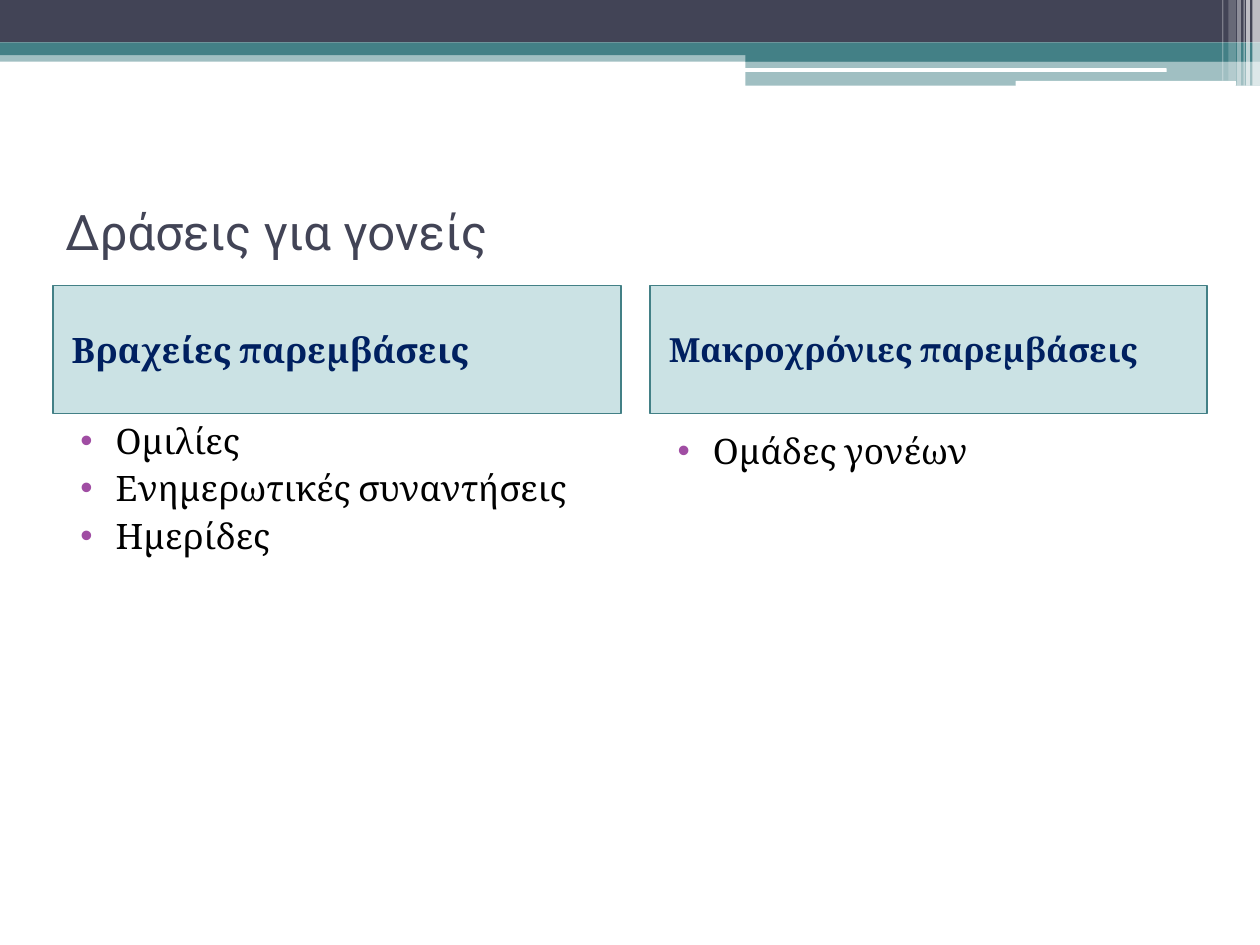
"""Build a slide that compares short and long interventions for parents."""
from lxml.etree import SubElement
from pptx import Presentation
from pptx.dml.color import RGBColor
from pptx.enum.shapes import MSO_SHAPE
from pptx.enum.text import MSO_ANCHOR, PP_ALIGN
from pptx.oxml.ns import qn
from pptx.util import Pt

NAVY, TEAL, WHITE = "424456", "438086", "FFFFFF"
PANEL, HEADING, BULLET, BLACK = "328E97", "002060", "A04DA3", "000000"
MARGIN = 30.24

BANDS = [
    (0, 28.8, 720, 6.48, TEAL, 50),
    (0, 0, 720, 24.3, NAVY, 100),
    (0, 24.3, 720, 7.2, TEAL, 100),
    (426, 28.08, 294, 7.2, TEAL, 100),
    (426, 34.9, 294, 14.1, TEAL, 50),
]
HIGHLIGHTS = [(425.5, 39, 241.2, 2.16), (580.3, 46.2, 126, 2.88)]
STRIPES = [
    (715.7, 4.3, 49, 65),
    (712.1, 2.16, 49, 65),
    (710.6, 0.72, 49, 60),
    (707, 2.16, 49, 40),
    (702, 4.3, 46.1, 20),
    (698.4, 0.72, 46.1, 30),
]

TITLE = "Δράσεις για γονείς"
COLUMNS = [
    {"heading": "Βραχείες παρεμβάσεις", "size": 20, "left": MARGIN,
     "width": 324.7, "list_top": 236.2,
     "items": ["Ομιλίες", "Ενημερωτικές συναντήσεις", "Ημερίδες"]},
    {"heading": "Μακροχρόνιες παρεμβάσεις", "size": 19, "left": 371.5,
     "width": 318.2, "list_top": 241.9, "items": ["Ομάδες γονέων"]},
]
PANEL_TOP, PANEL_HEIGHT = 163.2, 73.2
LIST_WIDTH, LIST_BOTTOM = 318.2, 519.1


def color(value):
    return RGBColor.from_string(value)


def add_box(slide, box, fill, opacity=100, kind=MSO_SHAPE.RECTANGLE, line=None):
    shape = slide.shapes.add_shape(kind, *map(Pt, box))
    shape.shadow.inherit = False
    shape.fill.solid()
    shape.fill.fore_color.rgb = color(fill)
    if opacity < 100:
        fill_color = shape.fill._xPr.find(qn("a:solidFill"))[0]
        SubElement(fill_color, qn("a:alpha"), val=str(opacity * 1000))
    if line:
        shape.line.color.rgb = color(line)
        shape.line.width = Pt(1)
    else:
        shape.line.fill.background()
    return shape


def write(shape, lines, size, font, text_color, anchor, bold=False,
          before=0, margin=0, indent=0, bullet=None):
    frame = shape.text_frame
    frame.word_wrap = True
    frame.vertical_anchor = anchor
    frame.text = "\n".join(lines)
    for paragraph in frame.paragraphs:
        paragraph.alignment = PP_ALIGN.LEFT
        paragraph.space_before = Pt(before)
        paragraph.font.size = Pt(size)
        paragraph.font.name = font
        paragraph.font.bold = bold
        paragraph.font.color.rgb = color(text_color)
        properties = paragraph._p.get_or_add_pPr()
        properties.set("marL", str(Pt(margin)))
        properties.set("indent", str(Pt(indent)))
        if bullet:
            bullet_color = properties.makeelement(qn("a:buClr"))
            SubElement(bullet_color, qn("a:srgbClr"), val=bullet)
            bullet_font = properties.makeelement(qn("a:buFont"), typeface="Arial")
            character = properties.makeelement(qn("a:buChar"), char="•")
            defaults = properties.find(qn("a:defRPr"))
            for element in (bullet_color, bullet_font, character):
                defaults.addprevious(element)


def add_header(slide):
    for *box, fill, opacity in BANDS:
        add_box(slide, box, fill, opacity)
    for box in HIGHLIGHTS:
        add_box(slide, box, WHITE, kind=MSO_SHAPE.ROUNDED_RECTANGLE)
    for left, width, height, opacity in STRIPES:
        add_box(slide, (left, 0, width, height), WHITE, opacity)


def add_column(slide, column):
    left, top = column["left"], column["list_top"]
    panel = add_box(slide, (left, PANEL_TOP, column["width"], PANEL_HEIGHT),
                    PANEL, 25, line=TEAL)
    write(panel, [column["heading"]], column["size"], "Cambria", HEADING,
          MSO_ANCHOR.MIDDLE, bold=True, before=3, margin=3.6)
    box = (left, top, LIST_WIDTH, LIST_BOTTOM - top)
    items = slide.shapes.add_textbox(*map(Pt, box))
    write(items, column["items"], 20, "Cambria", BLACK, MSO_ANCHOR.TOP,
          before=3, margin=28.8, indent=-20.16, bullet=BULLET)


def main():
    presentation = Presentation()
    presentation.slide_width, presentation.slide_height = Pt(720), Pt(540)
    slide = presentation.slides.add_slide(presentation.slide_layouts[6])
    add_header(slide)
    title = slide.shapes.add_textbox(*map(Pt, (MARGIN, 90, 660, 84.2)))
    write(title, [TITLE], 28, "Roboto", NAVY, MSO_ANCHOR.MIDDLE)
    for column in COLUMNS:
        add_column(slide, column)
    presentation.save("out.pptx")


if __name__ == "__main__":
    main()
